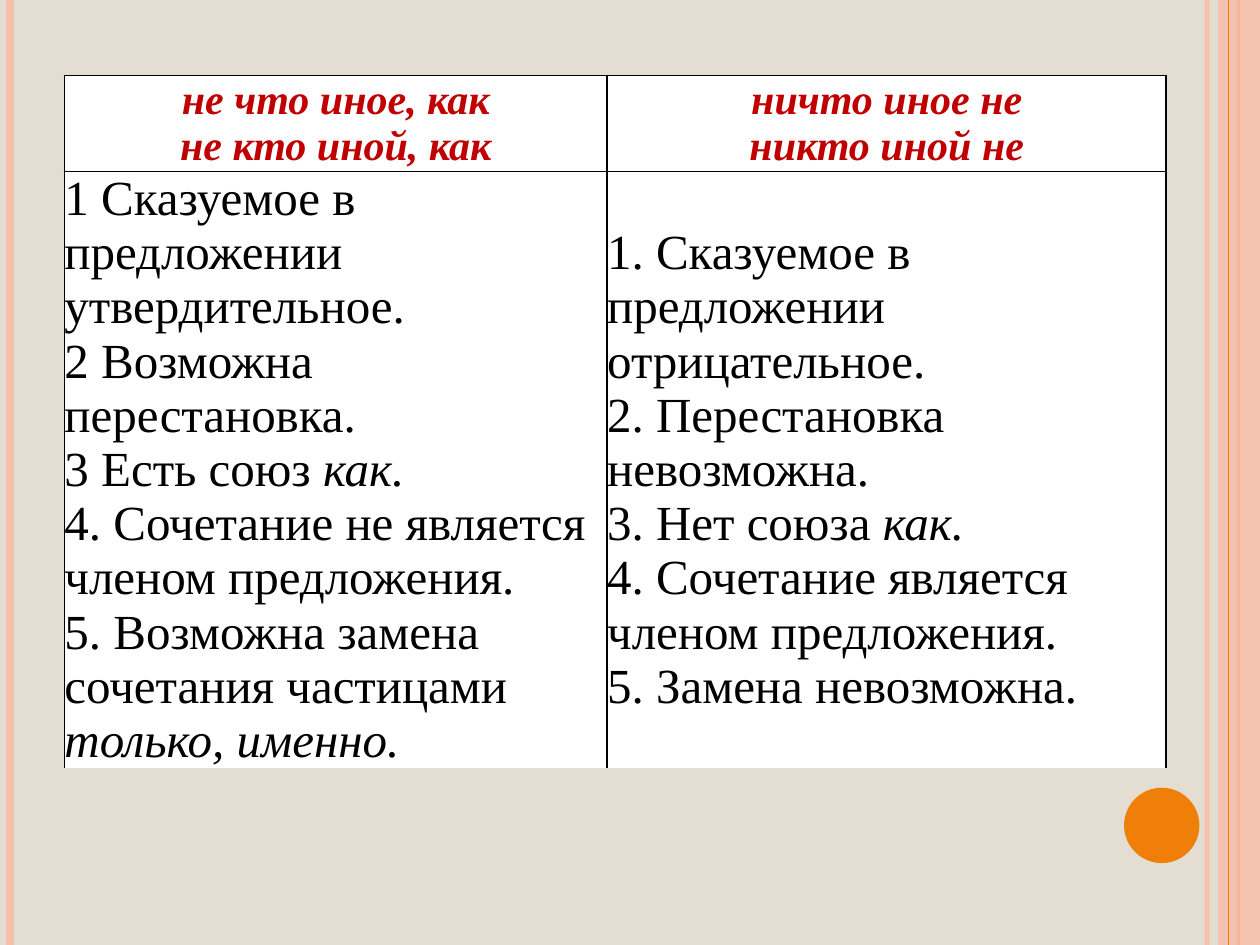
import pptx
import pptx.dml.color
import pptx.enum.shapes
import pptx.enum.text
import pptx.oxml
import pptx.oxml.ns
import pptx.util
from lxml import etree
from pptx.util import Cm, Pt

COLORS = {
    "background": "E3DED1",
    "stripe": "F6C0AB",
    "accent": "F07F09",
    "heading": "C00000",
    "text": "000000",
    "cell": "FFFFFF",
}
SLIDE_WIDTH, SLIDE_HEIGHT = 25.4, 19.05

HEADINGS = [
    ["не что иное, как", "не кто иной, как"],
    ["ничто иное не", "никто иной не"],
]
RULES = [
    [
        ("1 Сказуемое в предложении утвердительное.", ""),
        ("2 Возможна перестановка.", ""),
        ("3 Есть союз ", "как."),
        ("4. Сочетание не является членом предложения.", ""),
        ("5. Возможна замена сочетания частицами ", "только, именно."),
    ],
    [
        ("1. Сказуемое в предложении отрицательное.", ""),
        ("2. Перестановка невозможна.", ""),
        ("3. Нет союза ", "как."),
        ("4. Сочетание является членом предложения.", ""),
        ("5. Замена невозможна.", ""),
    ],
]


def rgb(name):
    return pptx.dml.color.RGBColor.from_string(COLORS[name])


def set_alpha(element, percent):
    color = element.find(".//" + pptx.oxml.ns.qn("a:srgbClr"))
    alpha = etree.SubElement(color, pptx.oxml.ns.qn("a:alpha"))
    alpha.set("val", str(percent * 1000))


def add_vertical_line(slide, x, color, width, alpha=None):
    line = slide.shapes.add_connector(
        pptx.enum.shapes.MSO_CONNECTOR.STRAIGHT, Cm(x), Cm(0), Cm(x), Cm(SLIDE_HEIGHT)
    )
    line.line.color.rgb = rgb(color)
    line.line.width = Pt(width)
    properties = line._element.spPr
    if alpha:
        set_alpha(properties, alpha)
    etree.SubElement(properties, pptx.oxml.ns.qn("a:effectLst"))


def add_plain_shape(slide, kind, left, top, width, height, color, alpha=None):
    shape = slide.shapes.add_shape(kind, Cm(left), Cm(top), Cm(width), Cm(height))
    shape.shadow.inherit = False
    shape.fill.solid()
    shape.fill.fore_color.rgb = rgb(color)
    shape.line.fill.background()
    if alpha:
        set_alpha(shape._element.spPr, alpha)


def add_decoration(slide):
    shapes = pptx.enum.shapes.MSO_SHAPE
    add_vertical_line(slide, 24.33, "stripe", 3, 93)
    add_vertical_line(slide, 0.2, "stripe", 4.5)
    add_vertical_line(slide, 24.97, "accent", 1.5)
    add_plain_shape(slide, shapes.RECTANGLE, 24.56, 0, 0.84, SLIDE_HEIGHT, "stripe", 87)
    add_vertical_line(slide, 24.76, "accent", 0.75)
    add_plain_shape(slide, shapes.OVAL, 22.66, 15.88, 1.52, 1.52, "accent")


def set_borders(cell, visible_sides):
    properties = cell._tc.get_or_add_tcPr()
    for index, side in enumerate("LRTB"):
        if side in visible_sides:
            fill = f'<a:solidFill><a:srgbClr val="{COLORS["text"]}"/></a:solidFill>'
        else:
            fill = "<a:noFill/>"
        border = pptx.oxml.parse_xml(
            f'<a:ln{side} {pptx.oxml.ns.nsdecls("a")} w="12700">{fill}</a:ln{side}>'
        )
        properties.insert(index, border)


def format_cell(cell, visible_sides):
    cell.margin_left = cell.margin_right = cell.margin_top = cell.margin_bottom = 0
    cell.vertical_anchor = pptx.enum.text.MSO_ANCHOR.MIDDLE
    cell.fill.solid()
    cell.fill.fore_color.rgb = rgb("cell")
    set_borders(cell, visible_sides)


def add_paragraph(cell, index, size, color, heading):
    frame = cell.text_frame
    paragraph = frame.add_paragraph() if index else frame.paragraphs[0]
    alignment = pptx.enum.text.PP_ALIGN
    paragraph.alignment = alignment.CENTER if heading else alignment.LEFT
    paragraph.font.name = "Times New Roman"
    paragraph.font.size = Pt(size)
    paragraph.font.color.rgb = rgb(color)
    paragraph.font.bold = heading
    paragraph.font.italic = heading
    return paragraph


def fill_heading(cell, lines):
    format_cell(cell, "LRTB")
    for index, text in enumerate(lines):
        paragraph = add_paragraph(cell, index, 24, "heading", True)
        paragraph.add_run().text = text


def fill_rules(cell, rules):
    format_cell(cell, "LRT")
    for index, (plain, emphasis) in enumerate(rules):
        paragraph = add_paragraph(cell, index, 28, "text", False)
        paragraph.add_run().text = plain
        if emphasis:
            run = paragraph.add_run()
            run.text = emphasis
            run.font.italic = True


def add_comparison_table(slide):
    column_widths, row_heights = [10.94, 11.27], [1.94, 12.02]
    table = slide.shapes.add_table(
        2, 2, Cm(1.3), Cm(1.52), Cm(sum(column_widths)), Cm(sum(row_heights))
    ).table
    table.first_row = False
    table.horz_banding = False
    for column, width in zip(table.columns, column_widths):
        column.width = Cm(width)
    for row, height in zip(table.rows, row_heights):
        row.height = Cm(height)
    for index, (heading, rules) in enumerate(zip(HEADINGS, RULES)):
        fill_heading(table.cell(0, index), heading)
        fill_rules(table.cell(1, index), rules)


def main():
    presentation = pptx.Presentation()
    presentation.slide_width = Cm(SLIDE_WIDTH)
    presentation.slide_height = Cm(SLIDE_HEIGHT)
    slide = presentation.slides.add_slide(presentation.slide_layouts[6])
    slide.background.fill.solid()
    slide.background.fill.fore_color.rgb = rgb("background")
    add_decoration(slide)
    add_comparison_table(slide)
    presentation.save("out.pptx")


if __name__ == "__main__":
    main()
